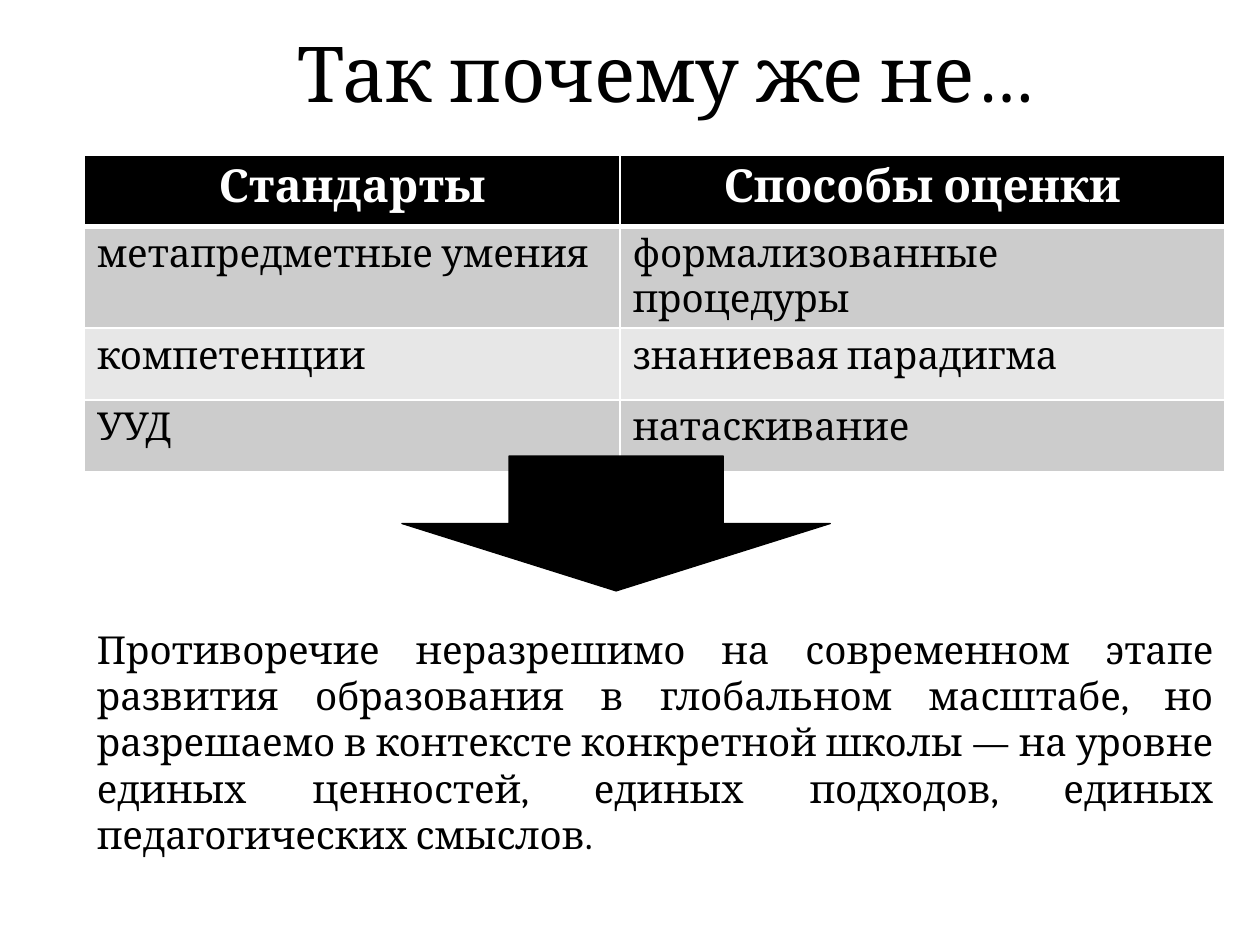
from lxml import etree
from pptx import Presentation
from pptx.dml.color import RGBColor
from pptx.enum.shapes import MSO_SHAPE as Shape
from pptx.enum.text import MSO_ANCHOR as Anchor, PP_ALIGN as Align
from pptx.oxml.ns import qn
from pptx.util import Inches, Pt

FONT = "Cambria"
BLACK = RGBColor(0x00, 0x00, 0x00)
WHITE = RGBColor(0xFF, 0xFF, 0xFF)
DARK_BAND = RGBColor(0xCC, 0xCC, 0xCC)
LIGHT_BAND = RGBColor(0xE7, 0xE7, 0xE7)

COLUMN_WIDTHS = (4.25, 4.8)
ROW_HEIGHT = 0.57
ROWS = (
    ("Стандарты", "Способы оценки"),
    ("метапредметные умения", "формализованные процедуры"),
    ("компетенции", "знаниевая парадигма"),
    ("УУД", "натаскивание"),
)
CONCLUSION = (
    "Противоречие неразрешимо на современном этапе развития образования "
    "в глобальном масштабе, но разрешаемо в контексте конкретной школы — "
    "на уровне единых ценностей, единых подходов, единых педагогических смыслов."
)


def write(frame, text, size, color=BLACK, align=Align.LEFT, bold=False):
    frame.text = text
    para = frame.paragraphs[0]
    para.alignment = align
    font = para.font
    font.name, font.size, font.bold = FONT, Pt(size), bold
    font.color.rgb = color


def set_borders(cell, bottom_width):
    """Draw white cell borders; schema order puts them before the fill."""
    properties = cell._tc.get_or_add_tcPr()
    widths = {"a:lnL": 1, "a:lnR": 1, "a:lnT": 1, "a:lnB": bottom_width}
    for index, (tag, width) in enumerate(widths.items()):
        line = etree.Element(qn(tag), w=str(Pt(width)))
        fill = etree.SubElement(line, qn("a:solidFill"))
        etree.SubElement(fill, qn("a:srgbClr"), val=str(WHITE))
        properties.insert(index, line)


def add_title(page, left, top, width, height):
    title = page.shapes.title
    title.left, title.top, title.width, title.height = left, top, width, height
    title.text_frame.vertical_anchor = Anchor.TOP
    write(title.text_frame, "Так почему же не…", 44, align=Align.CENTER)


def add_comparison(page, left, top, width, height):
    table = page.shapes.add_table(
        len(ROWS), len(COLUMN_WIDTHS), left, top, width, height).table
    for column, column_width in zip(table.columns, COLUMN_WIDTHS):
        column.width = Inches(column_width)
    for r, texts in enumerate(ROWS):
        table.rows[r].height = Inches(ROW_HEIGHT)
        for c, text in enumerate(texts):
            cell = table.cell(r, c)
            cell.fill.solid()
            if r == 0:
                cell.fill.fore_color.rgb = BLACK
                write(cell.text_frame, text, 26, WHITE, Align.CENTER, True)
            else:
                cell.fill.fore_color.rgb = DARK_BAND if r % 2 else LIGHT_BAND
                write(cell.text_frame, text, 22)
            set_borders(cell, 3 if r == 0 else 1)


def add_conclusion(page, left, top, width, height):
    box = page.shapes.add_textbox(left, top, width, height)
    box.text_frame.word_wrap = True
    write(box.text_frame, CONCLUSION, 22, align=Align.JUSTIFY)


def add_arrow(page, left, top, width, height):
    arrow = page.shapes.add_shape(Shape.DOWN_ARROW, left, top, width, height)
    arrow.shadow.inherit = False
    arrow.fill.solid()
    arrow.fill.fore_color.rgb = BLACK
    arrow.line.color.rgb = BLACK
    arrow.line.width = Pt(0.75)


def main():
    deck = Presentation()
    deck.slide_width, deck.slide_height = Inches(10), Inches(7.5)
    page = deck.slides.add_slide(deck.slide_layouts[5])
    regions = (
        (add_title, (0.28, 0.15, 10, 0.84)),
        (add_comparison, (0.67, 1.23, sum(COLUMN_WIDTHS), ROW_HEIGHT * len(ROWS))),
        (add_conclusion, (0.67, 4.92, 9.06, 1.58)),
        (add_arrow, (3.19, 3.62, 3.4, 1.07)),
    )
    for add_region, box in regions:
        add_region(page, *map(Inches, box))
    deck.save("out.pptx")


if __name__ == "__main__":
    main()
